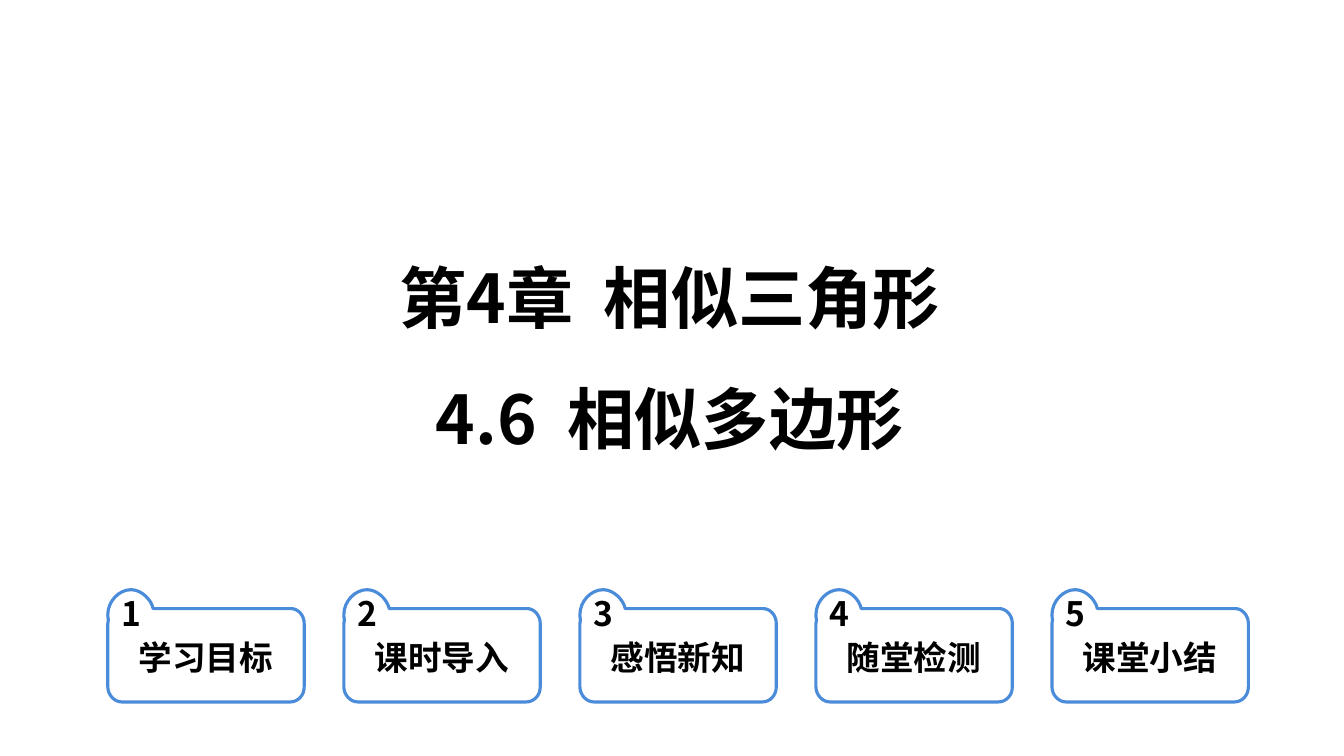
from dataclasses import dataclass

from lxml.etree import SubElement
from pptx import Presentation
from pptx.dml.color import RGBColor
from pptx.enum.text import MSO_ANCHOR as Anchor, MSO_AUTO_SIZE as AutoSize, PP_ALIGN as Align
from pptx.oxml.ns import qn
from pptx.util import Pt


@dataclass(frozen=True)
class Theme:
    font: str = "Noto Sans CJK SC"
    ink: RGBColor = RGBColor(0, 0, 0)
    paper: RGBColor = RGBColor(255, 255, 255)
    outline: RGBColor = RGBColor(0x4A, 0x8B, 0xDA)
    title_size: int = 48
    title_spacing: int = 86
    label_size: int = 24
    label_spacing: float = 28.6
    outline_width: float = 2.25


HEADING = ["第4章  相似三角形", "4.6  相似多边形"]
SECTIONS = ["学习目标", "课时导入", "感悟新知", "随堂检测", "课堂小结"]

# Row of section cards, in points
CARD_LEFT, CARD_TOP, CARD_PITCH = 77, 421.2, 168.6

# Card outline from its top left corner: one point is a line, three are a curve
CARD_START = (0, 18)
CARD_OUTLINE = [
    [(0, 8), (8.2, 0), (16.6, 0)],
    [(24, 0), (31, 7), (32.4, 13.5)],
    [(130.3, 13.5)],
    [(136, 13.2), (140.4, 18.5), (140.3, 24.3)],
    [(140.3, 69.3)],
    [(140.4, 75.5), (135.8, 80.2), (130.3, 80.2)],
    [(10.1, 80.2)],
    [(4.5, 80.2), (0, 75), (0, 69.3)],
    [(0, 24.3)],
    [(0, 23.6), (0.2, 22.5), (0.4, 21.6)],
    [(0.2, 20.9), (0, 18.7), CARD_START],
]


def write(frame, lines, *, theme, size, spacing, align=Align.LEFT):
    """Fill a text frame with one bold paragraph per line."""
    frame.text = "\n".join(lines)
    for paragraph in frame.paragraphs:
        paragraph.alignment = align
        paragraph.line_spacing = Pt(spacing)
        for run in paragraph.runs:
            run.font.size = Pt(size)
            run.font.bold = True
            run.font.color.rgb = theme.ink
            run.font.name = theme.font
            SubElement(run.font._element, qn("a:ea"), typeface=theme.font)


def bend(freeform, segments):
    """Join each three-point segment of a freeform into one cubic curve."""
    lines = iter(freeform._element.findall(".//" + qn("a:lnTo")))
    for segment in segments:
        first, *others = [next(lines) for _ in segment]
        if others:
            first.tag = qn("a:cubicBezTo")
            for line in others:
                first.append(line[0])
                line.getparent().remove(line)


class SlideBuilder:
    def __init__(self, slide, theme):
        self.slide = slide
        self.theme = theme

    def title(self, lines, left, top, width, height):
        title = self.slide.shapes.title
        title.left, title.top, title.width, title.height = map(Pt, (left, top, width, height))
        frame = title.text_frame
        frame.auto_size = AutoSize.NONE
        frame.word_wrap = False
        frame.vertical_anchor = Anchor.TOP
        write(frame, lines, theme=self.theme, size=self.theme.title_size,
              spacing=self.theme.title_spacing, align=Align.CENTER)

    def outline(self, shapes, left, top):
        start, *corners = [(Pt(left + x), Pt(top + y))
                           for x, y in [CARD_START, *sum(CARD_OUTLINE, [])]]
        builder = shapes.build_freeform(*start)
        builder.add_line_segments(corners, close=True)
        tab = builder.convert_to_shape()
        bend(tab, CARD_OUTLINE)
        tab.shadow.inherit = False
        tab.fill.solid()
        tab.fill.fore_color.rgb = self.theme.paper
        tab.line.color.rgb = self.theme.outline
        tab.line.width = Pt(self.theme.outline_width)

    def label(self, shapes, text, left, top, align):
        frame = shapes.add_textbox(Pt(left), Pt(top), Pt(134), Pt(36)).text_frame
        frame.word_wrap = True
        frame.auto_size = AutoSize.SHAPE_TO_FIT_TEXT
        write(frame, [text], theme=self.theme, size=self.theme.label_size,
              spacing=self.theme.label_spacing, align=align)

    def card(self, number, section, left, top):
        shapes = self.slide.shapes.add_group_shape().shapes
        self.outline(shapes, left, top)
        self.label(shapes, str(number), left + 2.9, top - 0.7, Align.LEFT)
        self.label(shapes, section, left + 2.9, top + 30.3, Align.CENTER)


def main():
    deck = Presentation()
    deck.slide_width, deck.slide_height = Pt(960), Pt(540)
    title_only = deck.slide_layouts[5]
    page = SlideBuilder(deck.slides.add_slide(title_only), Theme())

    # Chapter and lesson heading
    page.title(HEADING, 263.8, 151.2, 429.12, 181.44)

    # Numbered lesson sections
    for index, section in enumerate(SECTIONS):
        page.card(index + 1, section, CARD_LEFT + index * CARD_PITCH, CARD_TOP)

    deck.save("out.pptx")


if __name__ == "__main__":
    main()
